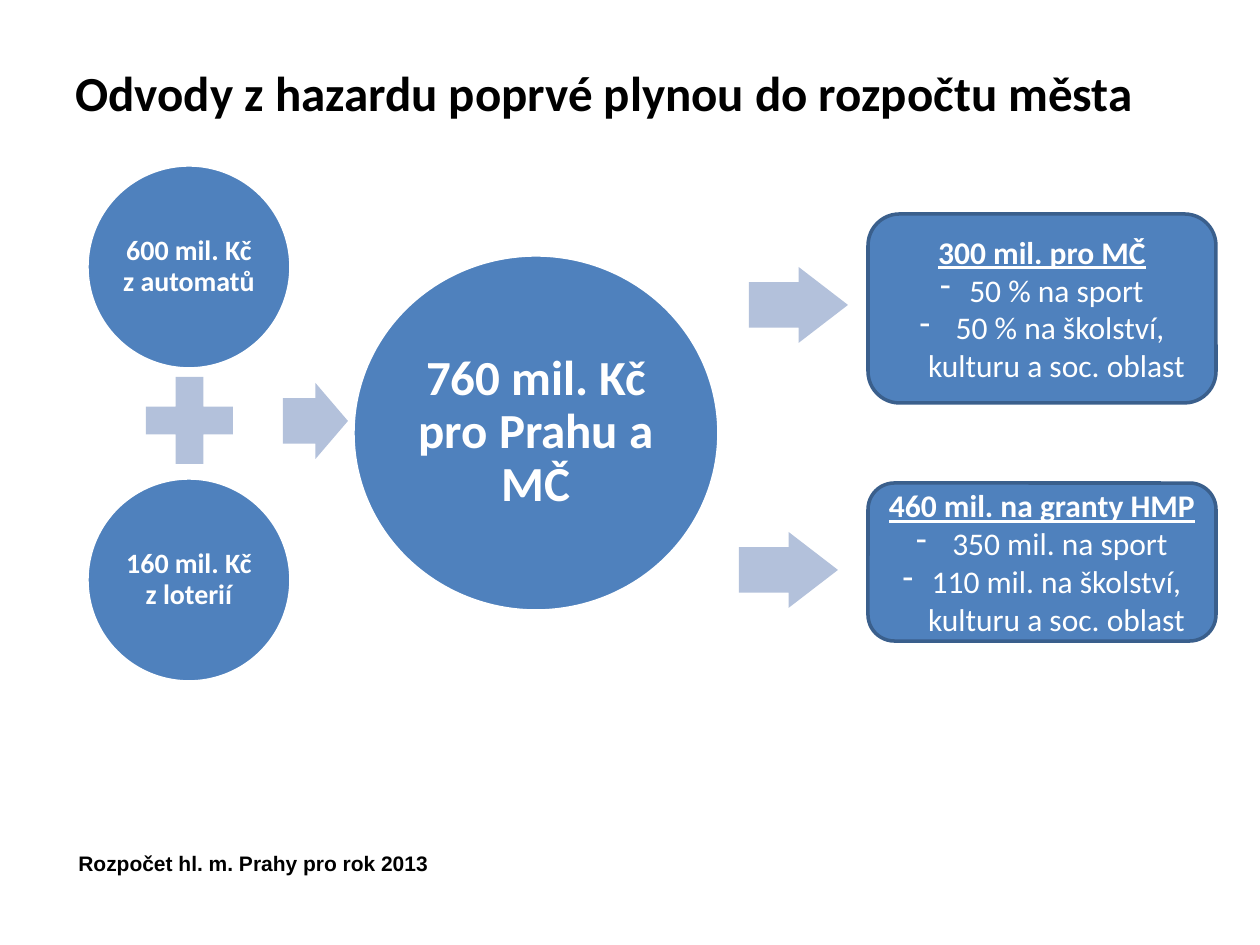
"""Build a slide on how gambling levies flow into the city budget."""
from dataclasses import dataclass

from lxml import etree
from pptx import Presentation
from pptx.dml.color import RGBColor
from pptx.enum.shapes import MSO_SHAPE
from pptx.enum.text import MSO_ANCHOR, PP_ALIGN
from pptx.oxml.ns import qn
from pptx.util import Emu, Pt

OVAL, CROSS = MSO_SHAPE.OVAL, MSO_SHAPE.CROSS
ARROW, ROUNDED = MSO_SHAPE.RIGHT_ARROW, MSO_SHAPE.ROUNDED_RECTANGLE
MIDDLE, TOP = MSO_ANCHOR.MIDDLE, MSO_ANCHOR.TOP
CENTER, LEFT = PP_ALIGN.CENTER, PP_ALIGN.LEFT

PX_PER_INCH = 126
BLUE, PALE, EDGE = "4F81BD", "B3C1DB", "3A5F8C"
WHITE, BLACK = "FFFFFF", "000000"
HANGING = 29


@dataclass(frozen=True)
class Box:
    left: int
    top: int
    width: int
    height: int


@dataclass(frozen=True)
class Amount:
    box: Box
    label: str
    size: int
    margin: int


@dataclass(frozen=True)
class Sign:
    kind: MSO_SHAPE
    box: Box
    adjustments: tuple[float, ...]


@dataclass(frozen=True)
class Recipient:
    box: Box
    heading: str
    uses: tuple[str, ...]


SOURCES = (
    Amount(Box(87, 165, 204, 204), "600 mil. Kč z automatů", 16, 5),
    Amount(Box(87, 478, 204, 204), "160 mil. Kč z loterií", 16, 5),
)
TOTAL = Amount(Box(353, 255, 366, 356), "760 mil. Kč pro Prahu a MČ", 28, 10)
SIGNS = (
    Sign(CROSS, Box(146, 377, 87, 87), (0.34,)),
    Sign(ARROW, Box(283, 383, 65, 76), (0.6, 0.5)),
    Sign(ARROW, Box(749, 267, 99, 76), (0.6, 0.65)),
    Sign(ARROW, Box(739, 532, 99, 76), (0.6, 0.65)),
)
RECIPIENTS = (
    Recipient(Box(868, 214, 348, 189), "300 mil. pro MČ",
              ("50 % na sport", " 50 % na školství, kulturu a soc. oblast")),
    Recipient(Box(868, 483, 348, 158), "460 mil. na granty HMP",
              (" 350 mil. na sport", "110 mil. na školství, kulturu a soc. oblast")),
)


def px(length: int) -> Emu:
    """Turn pixels into EMU."""
    return Emu(round(length * 914400 / PX_PER_INCH))


def color(value: str) -> RGBColor:
    """Turn a hex string into a colour."""
    return RGBColor.from_string(value)


def bounds(box: Box) -> tuple[Emu, ...]:
    """Return the box as EMU lengths."""
    return px(box.left), px(box.top), px(box.width), px(box.height)


def add_run(paragraph, text: str, size: int, fill: str, bold: bool = True,
            underline: bool = False, face: str = "Calibri") -> None:
    """Add one formatted run."""
    run = paragraph.add_run()
    run.text = text
    font = run.font
    font.name, font.size, font.bold, font.underline = face, Pt(size), bold, underline
    font.color.rgb = color(fill)


def add_figure(slide, kind: MSO_SHAPE, box: Box, fill: str, line: str = ""):
    """Add a flat preset shape with an optional outline."""
    figure = slide.shapes.add_shape(kind, *bounds(box))
    figure.shadow.inherit = False
    figure.fill.solid()
    figure.fill.fore_color.rgb = color(fill)
    if line:
        figure.line.color.rgb = color(line)
        figure.line.width = Pt(2)
    else:
        figure.line.fill.background()
    return figure


def add_amount(slide, amount: Amount) -> None:
    """Add a circle holding an amount of money."""
    frame = add_figure(slide, OVAL, amount.box, BLUE, WHITE).text_frame
    frame.word_wrap, frame.vertical_anchor = True, MIDDLE
    frame.margin_left = frame.margin_right = px(amount.margin)
    frame.margin_top = frame.margin_bottom = px(amount.margin)
    paragraph = frame.paragraphs[0]
    paragraph.alignment, paragraph.line_spacing = CENTER, 0.9
    add_run(paragraph, amount.label, amount.size, WHITE)


def add_sign(slide, sign: Sign) -> None:
    """Add a plus or an arrow."""
    figure = add_figure(slide, sign.kind, sign.box, PALE)
    for index, value in enumerate(sign.adjustments):
        figure.adjustments[index] = value


def add_dash(paragraph) -> None:
    """Give the paragraph a hanging dash bullet."""
    properties = paragraph._p.get_or_add_pPr()
    properties.set("marL", str(px(HANGING)))
    properties.set("indent", str(-px(HANGING)))
    etree.SubElement(properties, qn("a:buFontTx"))
    etree.SubElement(properties, qn("a:buChar")).set("char", "-")


def add_recipient(slide, recipient: Recipient) -> None:
    """Add a box with a heading and the uses of the money."""
    frame = add_figure(slide, ROUNDED, recipient.box, BLUE, EDGE).text_frame
    frame.word_wrap, frame.vertical_anchor = True, MIDDLE
    heading = frame.paragraphs[0]
    heading.alignment = CENTER
    add_run(heading, recipient.heading, 18, WHITE, underline=True)
    for use in recipient.uses:
        paragraph = frame.add_paragraph()
        add_dash(paragraph)
        paragraph.alignment = CENTER
        add_run(paragraph, use, 18, WHITE, bold=False)


def add_title(slide, text: str) -> None:
    """Place and format the title placeholder."""
    title = slide.shapes.title
    title.left, title.top, title.width, title.height = bounds(Box(63, 38, 1134, 107))
    title.text_frame.vertical_anchor = MIDDLE
    paragraph = title.text_frame.paragraphs[0]
    paragraph.alignment = LEFT
    add_run(paragraph, text, 28, BLACK)


def add_footer(slide, text: str) -> None:
    """Add the line naming the budget."""
    frame = slide.shapes.add_textbox(*bounds(Box(66, 844, 882, 82))).text_frame
    frame.word_wrap, frame.vertical_anchor = True, TOP
    add_run(frame.paragraphs[0], text, 12, BLACK, face="Arial")


def main() -> None:
    """Build and save the slide."""
    presentation = Presentation()
    presentation.slide_width, presentation.slide_height = px(1260), px(945)
    slide = presentation.slides.add_slide(presentation.slide_layouts[5])
    add_title(slide, "Odvody z hazardu poprvé plynou do rozpočtu města")
    add_footer(slide, "Rozpočet hl. m. Prahy pro rok 2013")
    for source in SOURCES:
        add_amount(slide, source)
    for sign in SIGNS:
        add_sign(slide, sign)
    add_amount(slide, TOTAL)
    for recipient in RECIPIENTS:
        add_recipient(slide, recipient)
    presentation.save("out.pptx")


if __name__ == "__main__":
    main()
